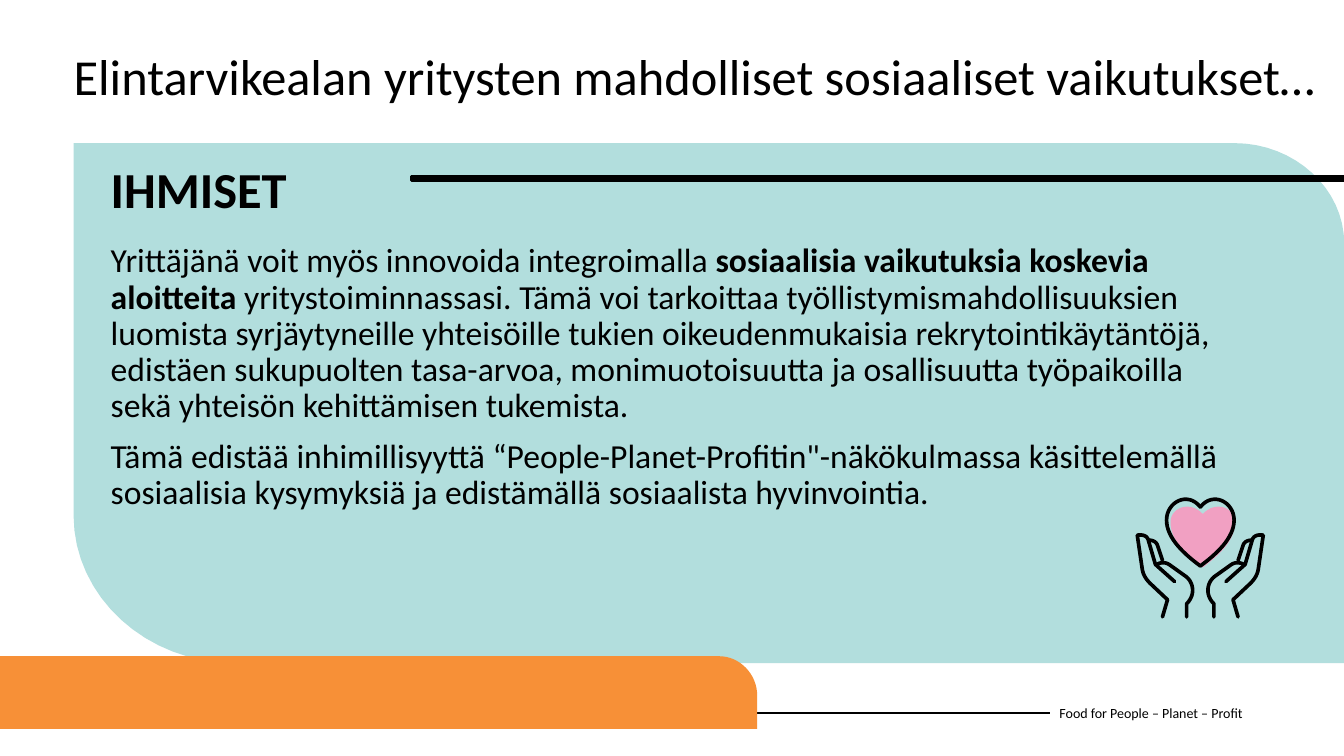
from lxml.etree import SubElement
from pptx import Presentation
from pptx.dml.color import RGBColor
from pptx.enum.shapes import MSO_CONNECTOR, MSO_SHAPE
from pptx.enum.text import MSO_ANCHOR, MSO_AUTO_SIZE, PP_ALIGN
from pptx.oxml.ns import qn
from pptx.util import Inches, Pt

BLACK = RGBColor(0x00, 0x00, 0x00)
TEAL = RGBColor(0xB2, 0xDE, 0xDD)
ORANGE = RGBColor(0xF7, 0x90, 0x37)
PINK = RGBColor(0xF1, 0xA0, 0xC2)

CELL = Inches(0.1)
COLS, ROWS = 133.33, 75
STEPS = 16


def grid(*cells):
    return [round(cell * CELL) for cell in cells]


def assign(target, values):
    for name, value in values.items():
        setattr(target, name, value)


def trace(start, *parts):
    dots = [start]
    for part in parts:
        if len(part) == 2:
            dots.append(part)
            continue
        (ax, ay), (bx, by, cx, cy, dx, dy) = dots[-1], part
        for step in range(1, STEPS + 1):
            t = step / STEPS
            u = 1 - t
            w = (u ** 3, 3 * u * u * t, 3 * u * t * t, t ** 3)
            dots.append((w[0] * ax + w[1] * bx + w[2] * cx + w[3] * dx,
                         w[0] * ay + w[1] * by + w[2] * cy + w[3] * dy))
    return dots


def mirror(dots, axis):
    return [(2 * axis - x, y) for x, y in dots]


class Canvas:
    font = {"name": "Calibri"}
    frame = {"word_wrap": True, "auto_size": MSO_AUTO_SIZE.NONE}
    para = {"alignment": PP_ALIGN.LEFT}

    def __init__(self, slide):
        self.slide = slide
        self.shapes = slide.shapes

    def letter(self, box, paras, size, anchor=MSO_ANCHOR.TOP, **para):
        frame = box.text_frame
        assign(frame, self.frame | {"vertical_anchor": anchor})
        for index, runs in enumerate(paras):
            line = frame.add_paragraph() if index else frame.paragraphs[0]
            assign(line, self.para | para)
            for text, bold in runs:
                run = line.add_run()
                run.text = text
                assign(run.font, self.font | {"size": Pt(size), "bold": bold})
                run.font.color.rgb = BLACK

    def title(self, place, text, size, **para):
        box = self.shapes.title
        assign(box, dict(zip(("left", "top", "width", "height"), grid(*place))))
        self.letter(box, [[(text, False)]], size, **para)

    def text(self, place, paras, size, **style):
        self.letter(self.shapes.add_textbox(*grid(*place)), paras, size, **style)

    def paint(self, shape, fill=None, width=None):
        shape.shadow.inherit = False
        if fill is None:
            shape.fill.background()
        else:
            shape.fill.solid()
            shape.fill.fore_color.rgb = fill
        if width is None:
            shape.line.fill.background()
        else:
            shape.line.color.rgb = BLACK
            shape.line.width = Pt(width)

    def bar(self, place, fill, width):
        shape = self.shapes.add_shape(MSO_SHAPE.RECTANGLE, *grid(*place))
        self.paint(shape, fill, width)

    def rule(self, ends, width):
        line = self.shapes.add_connector(MSO_CONNECTOR.STRAIGHT, *grid(*ends))
        line.line.color.rgb = BLACK
        line.line.width = Pt(width)
        SubElement(line._element.spPr, qn("a:effectLst"))

    def shape(self, dots, close=True):
        first, *rest = [grid(*dot) for dot in dots]
        pen = self.shapes.build_freeform(*first)
        pen.add_line_segments(rest, close=close)
        return pen.convert_to_shape()

    def area(self, dots, fill):
        self.paint(self.shape(dots), fill)

    def stroke(self, dots, width):
        shape = self.shape(dots, close=False)
        self.paint(shape, width=width)
        ln = shape._element.spPr.find(qn("a:ln"))
        ln.set("cap", "rnd")
        SubElement(ln, qn("a:round"))

    def icon(self, axis, strokes, width):
        for dots in strokes:
            self.stroke(dots, width)
            self.stroke(mirror(dots, axis), width)


def main():
    deck = Presentation()
    assign(deck, {"slide_width": Inches(13.33), "slide_height": ROWS * CELL})
    canvas = Canvas(deck.slides.add_slide(deck.slide_layouts[5]))

    tight = {"line_spacing": 0.9, "space_before": Pt(10)}
    canvas.title((6.3, 4.7, 125.4, 8.8),
                 "Elintarvikealan yritysten mahdolliset sosiaaliset vaikutukset…",
                 36, **tight)
    canvas.text((104.1, 68.7, 27.3, 4),
                [[("Food for People – Planet – Profit", False)]],
                10, anchor=MSO_ANCHOR.MIDDLE)
    canvas.rule((0, 70.7, 104.1, 70.7), 1.5)

    panel = trace((7.3, 14.2), (122.4, 14.2),
                  (128.4, 14.2, COLS, 18.7, COLS, 24.2),
                  (COLS, 65.8), (23.4, 65.8),
                  (14.5, 65.8, 7.3, 59.2, 7.3, 51.1))
    canvas.area(panel, TEAL)
    band = trace((0, 72.3), (0, 65.1), (71.3, 65.1),
                 (73.4, 65.1, 75.1, 66.9, 75.1, 69), (75.1, 72.3))
    canvas.area(band, ORANGE)
    canvas.bar((40.8, 17.5, COLS - 40.8, 0.4), BLACK, 1.93)

    canvas.text((10, 23.7, 114.6, 37.6), [
        [("Yrittäjänä voit myös innovoida integroimalla ", False),
         ("sosiaalisia vaikutuksia koskevia aloitteita ", True),
         ("yritystoiminnassasi. Tämä voi tarkoittaa työllistymismahdollisuuksien "
          "luomista syrjäytyneille yhteisöille tukien oikeudenmukaisia "
          "rekrytointikäytäntöjä, edistäen sukupuolten tasa-arvoa, "
          "monimuotoisuutta ja osallisuutta työpaikoilla sekä yhteisön "
          "kehittämisen tukemista.", False)],
        [("Tämä edistää inhimillisyyttä “People-Planet-Profitin\"-näkökulmassa "
          "käsittelemällä sosiaalisia kysymyksiä ja edistämällä sosiaalista "
          "hyvinvointia.", False)],
    ], 24, **tight)

    half = trace((119.3, 51), (120.6, 49.6, 122.5, 50.4, 122.5, 51.8),
                 (122.5, 53.6, 121, 55, 119.3, 56.3))
    canvas.area(half + mirror(half, 119.3)[::-1], PINK)

    heart = trace((119.05, 50.3), (120.3, 48.7, 122.4, 49.8, 122.4, 51.6),
                  (122.4, 53.4, 120.6, 55, 119.05, 56.15))
    palm = trace((122.8, 61.2), (122.3, 59.5), (124, 57.9),
                 (124.5, 57.4, 124.7, 57, 124.8, 56.5), (125.3, 53.1),
                 (124.7, 53, 124.3, 53.2, 124.2, 53.6),
                 (123.5, 56), (121.6, 57.7))
    thumb = trace((120.4, 61.2), (120.4, 59.9),
                  (119.4, 58.9, 119.8, 57.6, 120.6, 57.1), (122, 56.1),
                  (122.5, 55.7, 123, 55.8, 123.4, 56))
    finger = trace((122.8, 55.6), (123.3, 54.1),
                   (123.4, 53.8, 123.7, 53.6, 124.1, 53.6))
    canvas.icon(119.05, (heart, palm, thumb, finger), 2.6)

    canvas.text((10, 15.2, 26.7, 7.1), [[("IHMISET", True)]], 36)
    deck.save("out.pptx")


if __name__ == "__main__":
    main()
